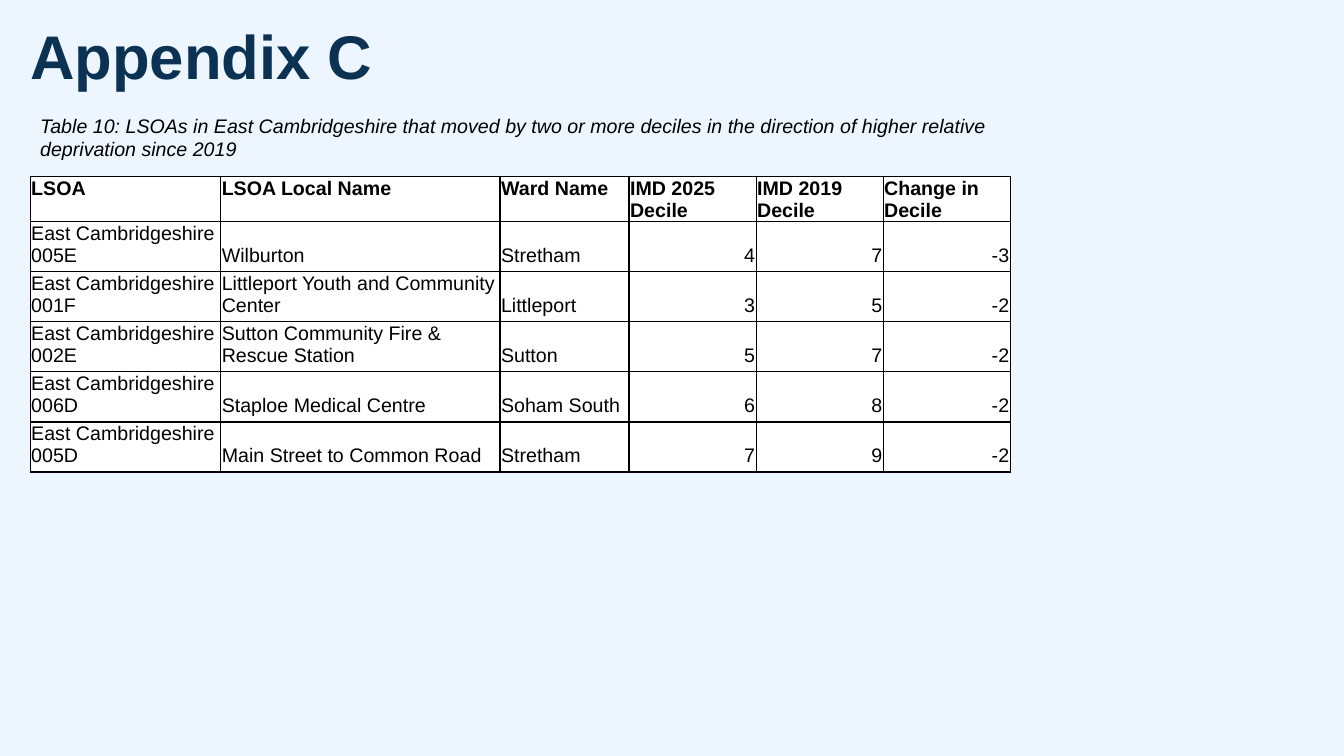
from lxml import etree
from pptx import Presentation
from pptx import util as u
from pptx.dml.color import RGBColor
from pptx.enum import text
from pptx.oxml.ns import qn

BACKGROUND = RGBColor(0xED, 0xF6, 0xFF)
NAVY = RGBColor(0x0B, 0x31, 0x53)
BLACK = RGBColor(0, 0, 0)
WHITE = RGBColor(0xFF, 0xFF, 0xFF)

HEADERS = ["LSOA", "LSOA Local Name", "Ward Name",
           "IMD 2025 Decile", "IMD 2019 Decile", "Change in Decile"]
AREAS = [
    ("005E", "Wilburton", "Stretham", 4, 7),
    ("001F", "Littleport Youth and Community Center", "Littleport", 3, 5),
    ("002E", "Sutton Community Fire & Rescue Station", "Sutton", 5, 7),
    ("006D", "Staploe Medical Centre", "Soham South", 6, 8),
    ("005D", "Main Street to Common Road", "Stretham", 7, 9),
]


class Deck:
    font = "Arial"
    width, height = 13.33, 7.5

    def __init__(self):
        self.prs = Presentation()
        self.prs.slide_width = u.Inches(self.width)
        self.prs.slide_height = u.Inches(self.height)
        self.s = self.prs.slides.add_slide(self.prs.slide_layouts[6])
        self.s.background.fill.solid()
        self.s.background.fill.fore_color.rgb = BACKGROUND

    def box(self, x, y, w, h):
        return [u.Inches(v) for v in (x * self.width, y * self.height,
                                      w * self.width, h * self.height)]

    def style(self, p, size, color=BLACK, bold=False, italic=False):
        for r in p.runs:
            f = r.font
            f.name, f.size, f.bold, f.italic = self.font, u.Pt(size), bold, italic
            f.color.rgb = color

    def text(self, words, x, y, w, h, size, inset=None, **look):
        tf = self.s.shapes.add_textbox(*self.box(x, y, w, h)).text_frame
        tf.word_wrap = True
        if inset is not None:
            tf.margin_left = tf.margin_right = u.Inches(inset)
            tf.margin_top = tf.margin_bottom = u.Inches(inset)
        tf.text = words
        p = tf.paragraphs[0]
        self.style(p, size, **look)
        return p

    def borders(self, cell):
        tc_pr = cell._tc.get_or_add_tcPr()
        for i, side in enumerate(("lnL", "lnR", "lnT", "lnB")):
            ln = etree.Element(qn(f"a:{side}"), w=str(u.Pt(1)))
            fill = etree.SubElement(ln, qn("a:solidFill"))
            etree.SubElement(fill, qn("a:srgbClr"), val=str(BLACK))
            tc_pr.insert(i, ln)

    def cell(self, cell, value, header):
        cell.fill.solid()
        cell.fill.fore_color.rgb = WHITE
        cell.margin_left = cell.margin_right = cell.margin_top = u.Inches(0.01)
        cell.margin_bottom = u.Inches(0 if header else 0.05)
        if not header:
            cell.vertical_anchor = text.MSO_ANCHOR.BOTTOM
        cell.text = str(value)
        p = cell.text_frame.paragraphs[0]
        if isinstance(value, int):
            p.alignment = text.PP_ALIGN.RIGHT
        self.style(p, 14, bold=header)
        self.borders(cell)

    def table(self, rows, x, y, w, h, columns, heights):
        table = self.s.shapes.add_table(
            len(rows), len(columns), *self.box(x, y, w, h)).table
        for column, width in zip(table.columns, columns):
            column.width = u.Inches(width)
        for i, (row, height) in enumerate(zip(table.rows, heights)):
            row.height = u.Inches(height)
            for cell, value in zip(row.cells, rows[i]):
                self.cell(cell, value, i == 0)


def main():
    deck = Deck()
    rows = [HEADERS] + [
        (f"East Cambridgeshire {code}", name, ward, new, old, new - old)
        for code, name, ward, new, old in AREAS]
    left = 0.3 / deck.width
    deck.table(rows, left, 1.75 / deck.height, 0.73, 0.41,
               [1.89, 2.77, 1.28] + [1.26] * 3, [0.22] + [0.32] * len(AREAS))
    p = deck.text("Appendix C", left, 0.26 / deck.height, 0.86, 0.11, 44,
                  inset=0, color=NAVY, bold=True)
    p.line_spacing, p.space_after = 0.9, u.Pt(6)
    deck.text("Table 10: LSOAs in East Cambridgeshire that moved by two or more "
              "deciles in the direction of higher relative deprivation since 2019",
              left, 1.08 / deck.height, 0.72, 0.08, 14, italic=True)
    deck.prs.save("out.pptx")


if __name__ == "__main__":
    main()
